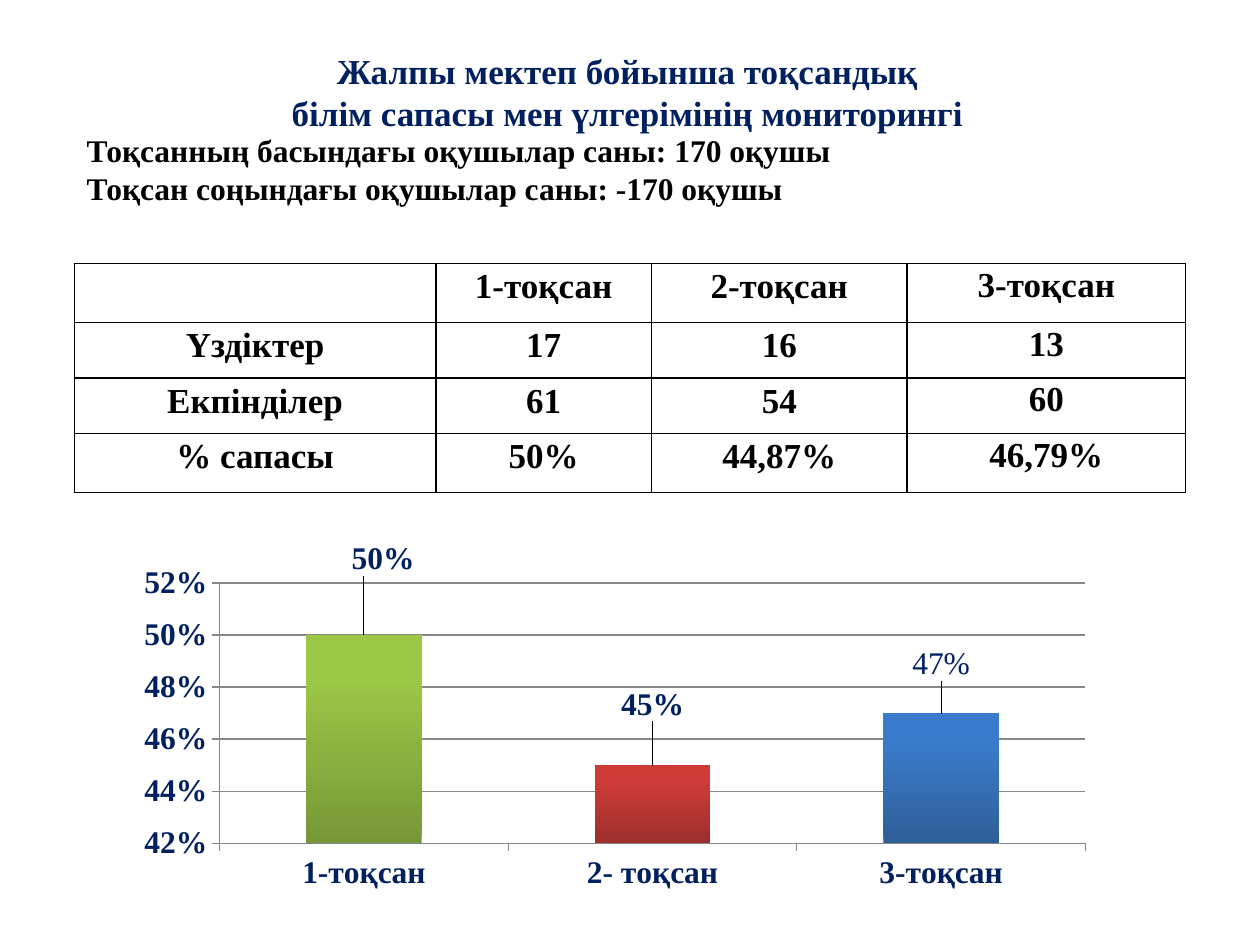
from dataclasses import dataclass

import pptx
import pptx.chart.data
import pptx.dml.color
import pptx.enum.chart
import pptx.enum.text
import pptx.oxml
import pptx.oxml.ns
import pptx.util

Inches = pptx.util.Inches
Pt = pptx.util.Pt
ALIGN = pptx.enum.text.PP_ALIGN


@dataclass(frozen=True)
class Theme:
    font: str = "Times New Roman"
    navy: str = "002060"
    black: str = "000000"
    grid: str = "878787"
    large: int = 20
    body: int = 18


THEME = Theme()

TITLE = ["Жалпы мектеп бойынша тоқсандық",
         "білім сапасы мен үлгерімінің мониторингі"]
PUPILS = ["Тоқсанның басындағы оқушылар саны: 170 оқушы",
          "Тоқсан соңындағы оқушылар саны: -170 оқушы"]
ROWS = [["", "1-тоқсан", "2-тоқсан", "3-тоқсан"],
        ["Үздіктер", "17", "16", "13"],
        ["Екпінділер", "61", "54", "60"],
        ["% сапасы", "50%", "44,87%", "46,79%"]]
COL_WIDTHS = [2.87, 1.71, 2.03, 2.21]
ROW_HEIGHTS = [0.47, 0.44, 0.44, 0.47]
# category, value, (bottom, top) bar colours, label shift, bold label
BARS = [("1-тоқсан", 0.50, ("779737", "9DC746"), (0.02, -0.14), True),
        ("2- тоқсан", 0.45, ("9C2F2D", "CE3B37"), (0, -0.1), True),
        ("3-тоқсан", 0.47, ("2F5F99", "3A7CCB"), (0, -0.07), False)]


def rgb(value):
    return pptx.dml.color.RGBColor.from_string(value)


def style_font(font, size, color, bold=True):
    font.name = THEME.font
    font.size = Pt(size)
    font.bold = bold
    font.color.rgb = rgb(color)


def write_text(tf, lines, *, size, color, align=ALIGN.LEFT, spacing=None, after=None):
    for i, line in enumerate(lines):
        p = tf.add_paragraph() if i else tf.paragraphs[0]
        p.alignment = align
        p.line_spacing = spacing
        p.space_after = after
        r = p.add_run()
        r.text = line
        style_font(r.font, size, color)


def add_text(s, left, top, width, height, lines, **text_format):
    tf = s.shapes.add_textbox(*map(Inches, (left, top, width, height))).text_frame
    tf.word_wrap = True
    write_text(tf, lines, **text_format)


def xml(markup, prefix):
    """Parse one element, declaring its namespace prefix."""
    tag, rest = markup[1:].split(">", 1)
    return pptx.oxml.parse_xml(f"<{tag} {pptx.oxml.ns.nsdecls(prefix)}>{rest}")


def border_cell(cell):
    cell.fill.background()
    tc_pr = cell._tc.get_or_add_tcPr()
    for i, side in enumerate(("lnL", "lnR", "lnT", "lnB")):
        line = xml(f'<a:{side}><a:solidFill><a:srgbClr val="{THEME.black}"/>'
                   f"</a:solidFill></a:{side}>", "a")
        line.set("w", str(Pt(1)))
        tc_pr.insert(i, line)


def add_results_table(s, left, top):
    table = s.shapes.add_table(
        len(ROWS), len(COL_WIDTHS), Inches(left), Inches(top),
        Inches(sum(COL_WIDTHS)), Inches(sum(ROW_HEIGHTS))).table
    for column, width in zip(table.columns, COL_WIDTHS):
        column.width = Inches(width)
    for row, height, values in zip(table.rows, ROW_HEIGHTS, ROWS):
        row.height = Inches(height)
        for i, (cell, value) in enumerate(zip(row.cells, values)):
            is_last = i == len(values) - 1
            cell.margin_left = cell.margin_right = Inches(0 if is_last else 0.07)
            cell.margin_top = Inches(0 if is_last else 0.01)
            cell.margin_bottom = 0
            if value:
                write_text(cell.text_frame, [value], size=THEME.large, color=THEME.black,
                           align=ALIGN.CENTER, spacing=1.07, after=Pt(8))
            border_cell(cell)


def manual_layout(**settings):
    items = "".join(f'<c:{name} val="{value}"/>' for name, value in settings.items())
    return xml(f"<c:layout><c:manualLayout>{items}</c:manualLayout></c:layout>", "c")


def style_axis(axis):
    style_font(axis.tick_labels.font, THEME.body, THEME.navy)
    axis.major_tick_mark = pptx.enum.chart.XL_TICK_MARK.OUTSIDE
    axis.minor_tick_mark = pptx.enum.chart.XL_TICK_MARK.NONE
    axis.format.line.color.rgb = rgb(THEME.grid)
    axis.format.line.width = Pt(0.75)


def style_bar(point, colors, shift, bold):
    fill = point.format.fill
    fill.gradient()
    fill.gradient_angle = 90
    for stop, color, position in zip(fill.gradient_stops, colors, (0, 0.8)):
        stop.color.rgb = rgb(color)
        stop.position = position
    label = point.data_label
    style_font(label.font, THEME.body, THEME.navy, bold)
    label.position = pptx.enum.chart.XL_LABEL_POSITION.OUTSIDE_END
    idx = label.font._element.getparent().getparent().getparent().getparent() \
        .find(pptx.oxml.ns.qn("c:idx"))
    idx.addnext(manual_layout(x=shift[0], y=shift[1]))


def add_quality_chart(s, left, top, width, height):
    data = pptx.chart.data.CategoryChartData(number_format="0%")
    data.categories = [bar[0] for bar in BARS]
    data.add_series("Series 1", [bar[1] for bar in BARS])
    chart = s.shapes.add_chart(
        pptx.enum.chart.XL_CHART_TYPE.COLUMN_CLUSTERED,
        *map(Inches, (left, top, width, height)), data).chart
    chart.has_legend = False
    chart.has_title = False
    style_font(chart.font, THEME.body, THEME.navy)

    style_axis(chart.category_axis)
    axis = chart.value_axis
    style_axis(axis)
    axis.minimum_scale, axis.maximum_scale, axis.major_unit = 0.42, 0.52, 0.02
    axis.tick_labels.number_format = "0%"
    axis.tick_labels.number_format_is_linked = False
    axis.has_major_gridlines = True
    axis.major_gridlines.format.line.color.rgb = rgb(THEME.grid)
    axis.major_gridlines.format.line.width = Pt(0.75)

    plot = chart.plots[0]
    plot.gap_width = 150
    plot.vary_by_categories = False
    series = plot.series[0]
    labels = series.data_labels
    labels.show_value = True
    labels.number_format = "0%"
    labels.number_format_is_linked = False
    style_font(labels.font, THEME.body, THEME.navy)
    for i, (_, _, colors, shift, bold) in enumerate(BARS):
        style_bar(series.points[i], colors, shift, bold)

    plot_area = chart._chartSpace.chart.plotArea
    for old in plot_area.findall(pptx.oxml.ns.qn("c:layout")):
        plot_area.remove(old)
    plot_area.insert(0, manual_layout(layoutTarget="inner", xMode="edge", yMode="edge",
                                      x=0.1, y=0.16, w=0.9, h=0.68))


def main():
    prs = pptx.Presentation()
    prs.slide_width, prs.slide_height = Inches(10), Inches(7.5)
    s = prs.slides.add_slide(prs.slide_layouts[6])
    add_text(s, 0.43, 0.34, 9.1, 0.77, TITLE,
             size=THEME.large, color=THEME.navy, align=ALIGN.CENTER)
    add_text(s, 0.59, 0.99, 8.94, 0.71, PUPILS, size=THEME.body, color=THEME.black)
    add_quality_chart(s, 0.98, 4.14, 7.64, 3.04)
    add_results_table(s, 0.59, 2.09)
    prs.save("out.pptx")


if __name__ == "__main__":
    main()
